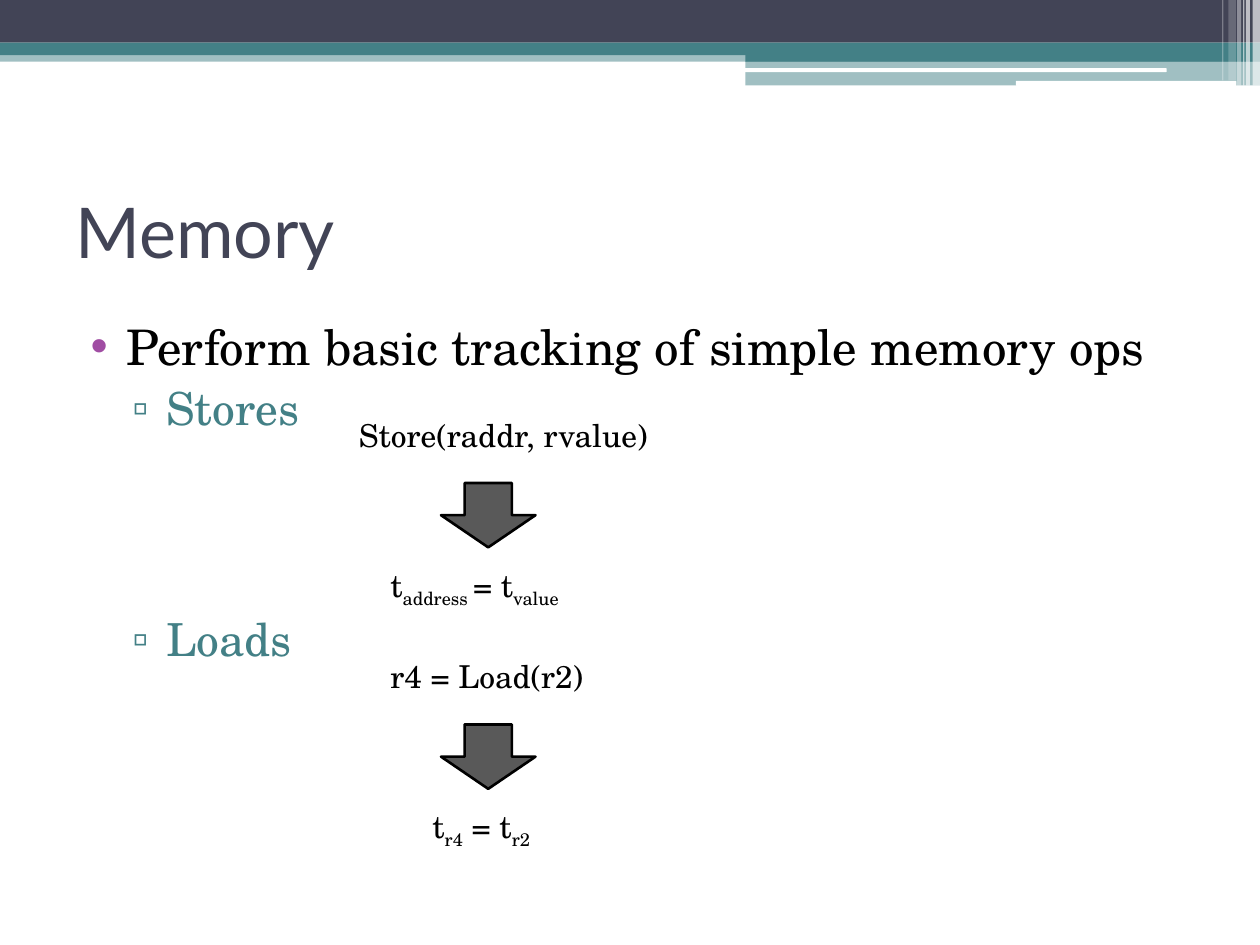
from dataclasses import dataclass

from lxml import etree
from pptx import Presentation
from pptx.dml.color import RGBColor
from pptx.enum.shapes import MSO_SHAPE
from pptx.enum.text import MSO_ANCHOR, MSO_AUTO_SIZE, PP_ALIGN
from pptx.oxml.ns import qn
from pptx.util import Pt

RECT, ROUND = MSO_SHAPE.RECTANGLE, MSO_SHAPE.ROUNDED_RECTANGLE
DOWN_ARROW = MSO_SHAPE.DOWN_ARROW
MIDDLE, LEFT = MSO_ANCHOR.MIDDLE, PP_ALIGN.LEFT
NO_AUTOFIT = MSO_AUTO_SIZE.NONE

NAVY = RGBColor(0x42, 0x44, 0x56)
TEAL = RGBColor(0x43, 0x80, 0x86)
PURPLE = RGBColor(0xA0, 0x4D, 0xA3)
GRAY = RGBColor(0x59, 0x59, 0x59)
WHITE = RGBColor(0xFF, 0xFF, 0xFF)
BLACK = RGBColor(0, 0, 0)
TITLE_FONT, BODY_FONT = "Lato", "TeX Gyre Schola"


@dataclass
class Bar:
    left: float
    top: float
    width: float
    height: float
    color: RGBColor
    alpha: int = 100
    kind: int = RECT


@dataclass
class Bullet:
    text: str
    level: int
    size: float
    color: RGBColor
    char: str
    char_color: RGBColor
    margin: float
    indent: float
    before: float = 3


@dataclass
class Formula:
    """Runs alternate between normal text and subscript."""
    left: float
    top: float
    width: float
    runs: list[str]


BARS = [
    Bar(0, 28.8, 720, 6.5, TEAL, 50),
    Bar(0, 0, 720, 24.4, NAVY),
    Bar(0, 24.4, 720, 7.2, TEAL),
    Bar(426, 28, 294, 7.2, TEAL),
    Bar(426, 34.9, 294, 14, TEAL, 50),
    Bar(425.5, 39, 241.2, 2.2, WHITE, kind=ROUND),
    Bar(580.5, 46.2, 126, 2.9, WHITE, kind=ROUND),
    Bar(715.8, 0, 4.2, 48.9, WHITE, 65),
    Bar(712, 0, 2.2, 48.9, WHITE, 65),
    Bar(710.4, 0, 0.8, 48.9, WHITE, 60),
    Bar(707, 0, 2.2, 48.9, WHITE, 40),
    Bar(702, 0, 4.3, 46, WHITE, 20),
    Bar(698.4, 0, 0.8, 46, WHITE, 30),
]
BULLETS = [
    Bullet("Perform basic tracking of simple memory ops", 0, 28, BLACK, "•", PURPLE, 28.8, -20.2),
    Bullet("Stores", 1, 26, TEAL, "▫", TEAL, 51.8, -19.4),
    Bullet("Loads", 1, 26, TEAL, "▫", TEAL, 51.8, -19.4, before=101),
]
FORMULAS = [
    Formula(198, 234, 192, ["Store(raddr, rvalue)"]),
    Formula(216, 319.7, 129, ["t", "address ", "= t", "value"]),
    Formula(216, 372, 138, ["r4 = Load(r2)"]),
    Formula(240, 457.5, 84, ["t", "r4", " = t", "r2"]),
]
ARROW_TOPS = [276, 414]


def add_run(p, text: str, font: str, size: float, color: RGBColor):
    r = p.add_run()
    r.text = text
    r.font.name, r.font.size = font, Pt(size)
    r.font.color.rgb = color
    return r


def place(sp, left: float, top: float, width: float, height: float) -> None:
    sp.left, sp.top, sp.width, sp.height = Pt(left), Pt(top), Pt(width), Pt(height)


def add_bar(s, bar: Bar) -> None:
    sp = s.shapes.add_shape(bar.kind, Pt(bar.left), Pt(bar.top), Pt(bar.width), Pt(bar.height))
    sp.shadow.inherit = False
    sp.fill.solid()
    sp.fill.fore_color.rgb = bar.color
    sp.line.fill.background()
    if bar.alpha < 100:
        clr = sp.fill._xPr.find(qn("a:solidFill")).find(qn("a:srgbClr"))
        etree.SubElement(clr, qn("a:alpha"), val=str(bar.alpha * 1000))


def add_bullet(p, b: Bullet) -> None:
    p.level, p.alignment = b.level, LEFT
    p.space_before = Pt(b.before)
    pPr = p._p.get_or_add_pPr()
    pPr.set("marL", str(Pt(b.margin)))
    pPr.set("indent", str(Pt(b.indent)))
    clr = etree.SubElement(pPr, qn("a:buClr"))
    etree.SubElement(clr, qn("a:srgbClr"), val=str(b.char_color))
    etree.SubElement(pPr, qn("a:buChar"), char=b.char)
    add_run(p, b.text, BODY_FONT, b.size, b.color)


def add_formula(s, f: Formula) -> None:
    tf = s.shapes.add_textbox(Pt(f.left), Pt(f.top), Pt(f.width), Pt(29)).text_frame
    tf.word_wrap = True
    for i, text in enumerate(f.runs):
        r = add_run(tf.paragraphs[0], text, BODY_FONT, 18, BLACK)
        if i % 2:
            r.font._element.set("baseline", "-25000")


def add_arrow(s, top: float) -> None:
    sp = s.shapes.add_shape(DOWN_ARROW, Pt(252), Pt(top), Pt(54), Pt(36.8))
    sp.shadow.inherit = False
    sp.fill.solid()
    sp.fill.fore_color.rgb = GRAY
    sp.line.color.rgb = BLACK
    sp.line.width = Pt(1.5)


def main() -> None:
    prs = Presentation()
    prs.slide_width, prs.slide_height = Pt(720), Pt(540)
    s = prs.slides.add_slide(prs.slide_layouts[1])
    for bar in BARS:
        add_bar(s, bar)

    title, body = s.placeholders
    place(title, 36, 90, 648, 84)
    tf = title.text_frame
    tf.auto_size, tf.vertical_anchor = NO_AUTOFIT, MIDDLE
    tf.paragraphs[0].alignment = LEFT
    add_run(tf.paragraphs[0], "Memory", TITLE_FONT, 40, NAVY)

    place(body, 36, 177, 648, 340.5)
    tf = body.text_frame
    tf.auto_size = NO_AUTOFIT
    for i, bullet in enumerate(BULLETS):
        add_bullet(tf.add_paragraph() if i else tf.paragraphs[0], bullet)

    for formula in FORMULAS:
        add_formula(s, formula)
    for top in ARROW_TOPS:
        add_arrow(s, top)
    prs.save("out.pptx")


if __name__ == "__main__":
    main()
